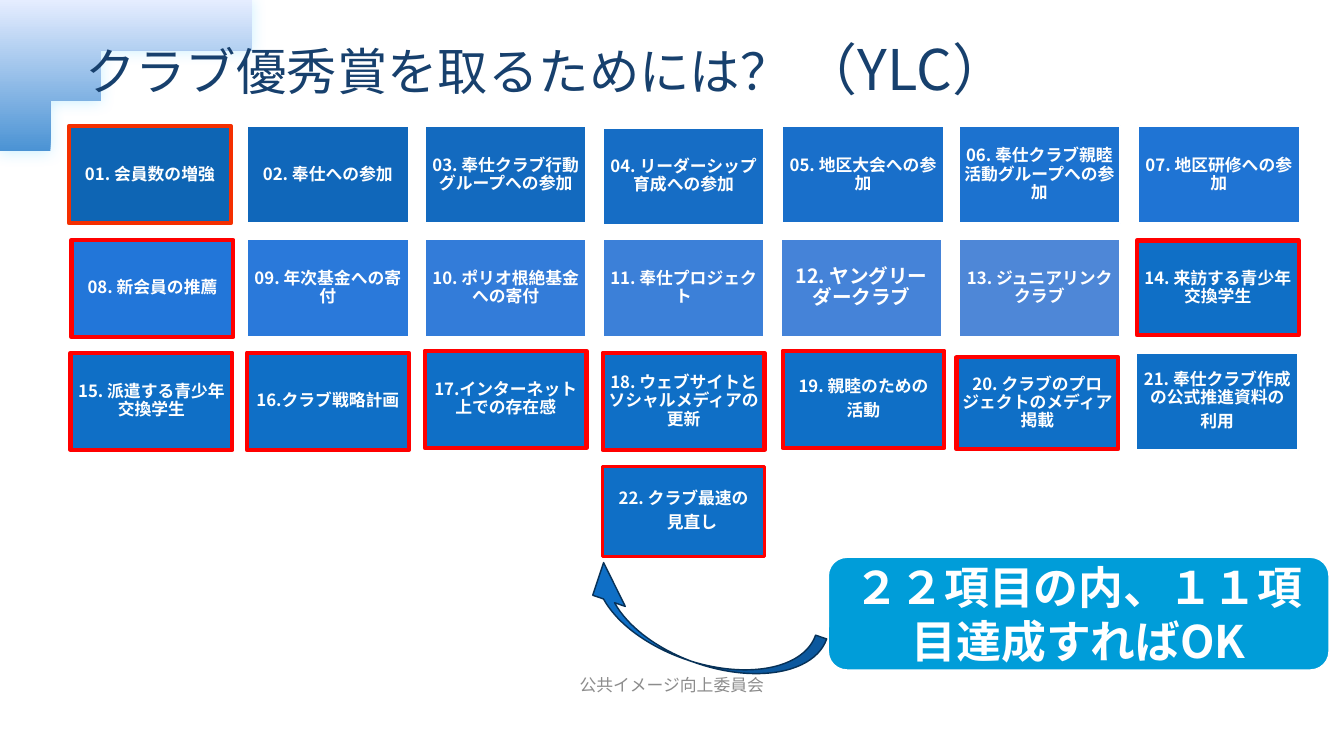
import pptx
import pptx.dml.color
import pptx.enum.shapes
import pptx.enum.text
import pptx.oxml
import pptx.oxml.ns
import pptx.util

RGB = pptx.dml.color.RGBColor
SHAPE = pptx.enum.shapes.MSO_SHAPE
ALIGN = pptx.enum.text.PP_ALIGN
ANCHOR = pptx.enum.text.MSO_ANCHOR

WHITE = RGB(0xFF, 0xFF, 0xFF)
RED = RGB(0xFF, 0x00, 0x00)
ORANGE = RGB(0xF4, 0x2F, 0x00)
NAVY = RGB(0x17, 0x40, 0x6D)
DARK = RGB(0x07, 0x31, 0x57)
BLUE = RGB(0x0F, 0x6F, 0xC6)
CYAN = RGB(0x00, 0x9D, 0xD9)
GRAY = RGB(0x8C, 0x8C, 0x8C)
SWOOSH_DARK = RGB(0x4B, 0x93, 0xD4)
SWOOSH_LIGHT = RGB(0xE5, 0xED, 0xFF)
SHADES = [RGB.from_string(c) for c in (
    "0E65B4 1067BA 136ABF 166DC5 196FCA 1C72CF 1F74D4 "
    "2276D9 2A79DA 337CD9 3C80D8 4583D8 4E87D7").split()]

ITEMS = [
    "01. 会員数の増強", "02. 奉仕への参加", "03. 奉仕クラブ行動グループへの参加",
    "04. リーダーシップ育成への参加", "05. 地区大会への参加",
    "06. 奉仕クラブ親睦活動グループへの参加", "07. 地区研修への参加",
    "08. 新会員の推薦", "09. 年次基金への寄付", "10. ポリオ根絶基金への寄付",
    "11. 奉仕プロジェクト", "12. ヤングリーダークラブ", "13. ジュニアリンククラブ",
    "14. 来訪する青少年交換学生", "15. 派遣する青少年交換学生", "16.クラブ戦略計画",
    "17.インターネット上での存在感", "18. ウェブサイトとソシャルメディアの更新",
    "19. 親睦のための\n活動", "20. クラブのプロジェクトのメディア掲載",
    "21. 奉仕クラブ作成の公式推進資料の\n利用", "22. クラブ最速の\n　見直し"]
RED_FRAMES = {8, 14, 15, 16, 17, 18, 19, 20, 22}
NUDGES = {4: (0, 0.03), 5: (0.03, 0), 7: (0.03, 0), 8: (0.05, 0.01), 14: (0.01, 0.02),
          15: (0.03, 0), 17: (0, -0.04), 19: (0.04, -0.04), 20: (-0.04, 0.09)}
HEIGHTS = {14: 1.88, 20: 1.82, 22: 1.79}
COLUMNS = 7

SWOOSH_START = (0.47, 2.98)
SWOOSH_CURVES = [
    ((1.1, 2.28), (1.86, 1.7), (2.71, 1.29)),
    ((3.84, 0.74), (5.07, 0.49), (6.3, 0.32)),
    ((7.98, 0.09), (9.68, 0), (11.39, 0))]
SWOOSH_SHADOW = (
    '<a:effectLst xmlns:a="http://schemas.openxmlformats.org/drawingml/2006/main">'
    '<a:outerShdw blurRad="279400" dist="25400" dir="5400000" rotWithShape="0">'
    '<a:srgbClr val="4FCEFF"><a:alpha val="30000"/></a:srgbClr>'
    '</a:outerShdw></a:effectLst>')


class Deck:
    """Hold the slide, its font and its tile grid, and draw each kind of element."""

    font = "Noto Sans CJK JP"
    width, height = 26.67, 15
    left, top = 1.37, 2.5
    column, row = 3.53, 2.25
    tile_width, tile_height = 3.21, 1.93

    def __init__(self):
        self.prs = pptx.Presentation()
        self.prs.slide_width = pptx.util.Inches(self.width)
        self.prs.slide_height = pptx.util.Inches(self.height)
        self.s = self.prs.slides.add_slide(self.prs.slide_layouts[6])

    def box(self, x, y, w, h):
        return [pptx.util.Inches(v) for v in (x, y, w, h)]

    def format_run(self, r, size, color, bold):
        r.font.name, r.font.size = self.font, pptx.util.Pt(size)
        r.font.bold, r.font.color.rgb = bold, color
        ea = pptx.oxml.ns.qn("a:ea")
        r.font._element.get_or_add_latin().addnext(
            r.font._element.makeelement(ea, {"typeface": self.font}))

    def set_text(self, sp, text, size, color, bold=False, align=ALIGN.CENTER,
                 anchor=ANCHOR.MIDDLE, inset=(0.1, 0.05), spacing=None, after=None):
        tf = sp.text_frame
        tf.text, tf.word_wrap, tf.vertical_anchor = text, True, anchor
        tf.margin_left = tf.margin_right = pptx.util.Inches(inset[0])
        tf.margin_top = tf.margin_bottom = pptx.util.Inches(inset[1])
        for p in tf.paragraphs:
            p.alignment, p.line_spacing = align, spacing
            p.space_after = after
            for r in p.runs:
                self.format_run(r, size, color, bold)
        return tf

    def shape(self, kind, box, fill, line, weight):
        sp = self.s.shapes.add_shape(kind, *self.box(*box))
        sp.shadow.inherit = False
        sp.fill.solid()
        sp.fill.fore_color.rgb = fill
        sp.line.color.rgb, sp.line.width = line, pptx.util.Pt(weight)
        return sp

    def label(self, box, text, size, color, **style):
        sp = self.s.shapes.add_textbox(*self.box(*box))
        return self.set_text(sp, text, size, color, **style)

    def tile(self, column, row, text, fill, line, weight, size=24, inset=0.1,
             nudge=(0, 0), height=tile_height):
        x = self.left + column * self.column + nudge[0]
        y = self.top + row * self.row + nudge[1]
        sp = self.shape(SHAPE.RECTANGLE, (x, y, self.tile_width, height), fill, line, weight)
        self.set_text(sp, text, size, WHITE, bold=True, inset=(inset, inset),
                      spacing=0.9, after=pptx.util.Pt(0.35 * size))

    def swoosh(self, start, curves, steps=16):
        points, p0 = [], start
        for p1, p2, p3 in curves:
            for t in (i / steps for i in range(1, steps + 1)):
                u = 1 - t
                points.append(tuple(
                    u**3 * a + 3 * u * u * t * b + 3 * u * t * t * c + t**3 * d
                    for a, b, c, d in zip(p0, p1, p2, p3)))
            p0 = p3
        fb = self.s.shapes.build_freeform(*start, scale=pptx.util.Inches(1))
        fb.add_line_segments(points + [(start[0], 0)], close=True)
        sp = fb.convert_to_shape()
        sp.line.fill.background()
        sp.fill.gradient()
        sp.fill.gradient_angle = 90
        for stop, color, position in zip(
                sp.fill.gradient_stops, (SWOOSH_DARK, SWOOSH_LIGHT), (0, 1)):
            stop.color.rgb, stop.position = color, position
        sp._element.spPr.append(pptx.oxml.parse_xml(SWOOSH_SHADOW))

    def arrow(self, box, rotation, adjustments):
        sp = self.shape(SHAPE.CURVED_UP_ARROW, box, BLUE, DARK, 2)
        sp.rotation = rotation
        sp._element.spPr.xfrm.set("flipV", "1")
        for i, value in enumerate(adjustments):
            sp.adjustments[i] = value


def main():
    d = Deck()
    d.swoosh(SWOOSH_START, SWOOSH_CURVES)
    d.label((10.33, 13.18, 6, 0.8), "公共イメージ向上委員会", 24, GRAY, inset=(0.2, 0.1))

    for i, text in enumerate(ITEMS):
        n = i + 1
        row, column = divmod(i, COLUMNS)
        if n == len(ITEMS):
            column = COLUMNS // 2
        fill = SHADES[i] if i < len(SHADES) else BLUE
        line, weight = (RED, 6) if n in RED_FRAMES else (WHITE, 3)
        if n == 1:
            line, weight = ORANGE, 6
        elif n == len(ITEMS):
            weight = 4.5
        size, inset = (28, 0.12) if n == 12 else (24, 0.1)
        d.tile(column, row, text, fill, line, weight, size, inset,
               NUDGES.get(n, (0, 0)), HEIGHTS.get(n, d.tile_height))

    tf = d.label((1.65, 0.6, 19.16, 1.45), "クラブ優秀賞を取るためには？ ", 72, NAVY,
                 align=ALIGN.LEFT, anchor=ANCHOR.BOTTOM, inset=(0.04, 0.04))
    r = tf.paragraphs[0].add_run()
    r.text = "（YLC）"
    d.format_run(r, 80, NAVY, False)

    sp = d.shape(SHAPE.ROUNDED_RECTANGLE, (16.43, 11.05, 9.95, 2.25), CYAN, WHITE, 3)
    d.set_text(sp, "２２項目の内、１１項目達成すればOK", 64, WHITE, bold=True)
    d.arrow((11.31, 11.83, 5.02, 1.29), 198.9, (0.18, 0.53, 0.53))
    d.prs.save("out.pptx")


if __name__ == "__main__":
    main()
